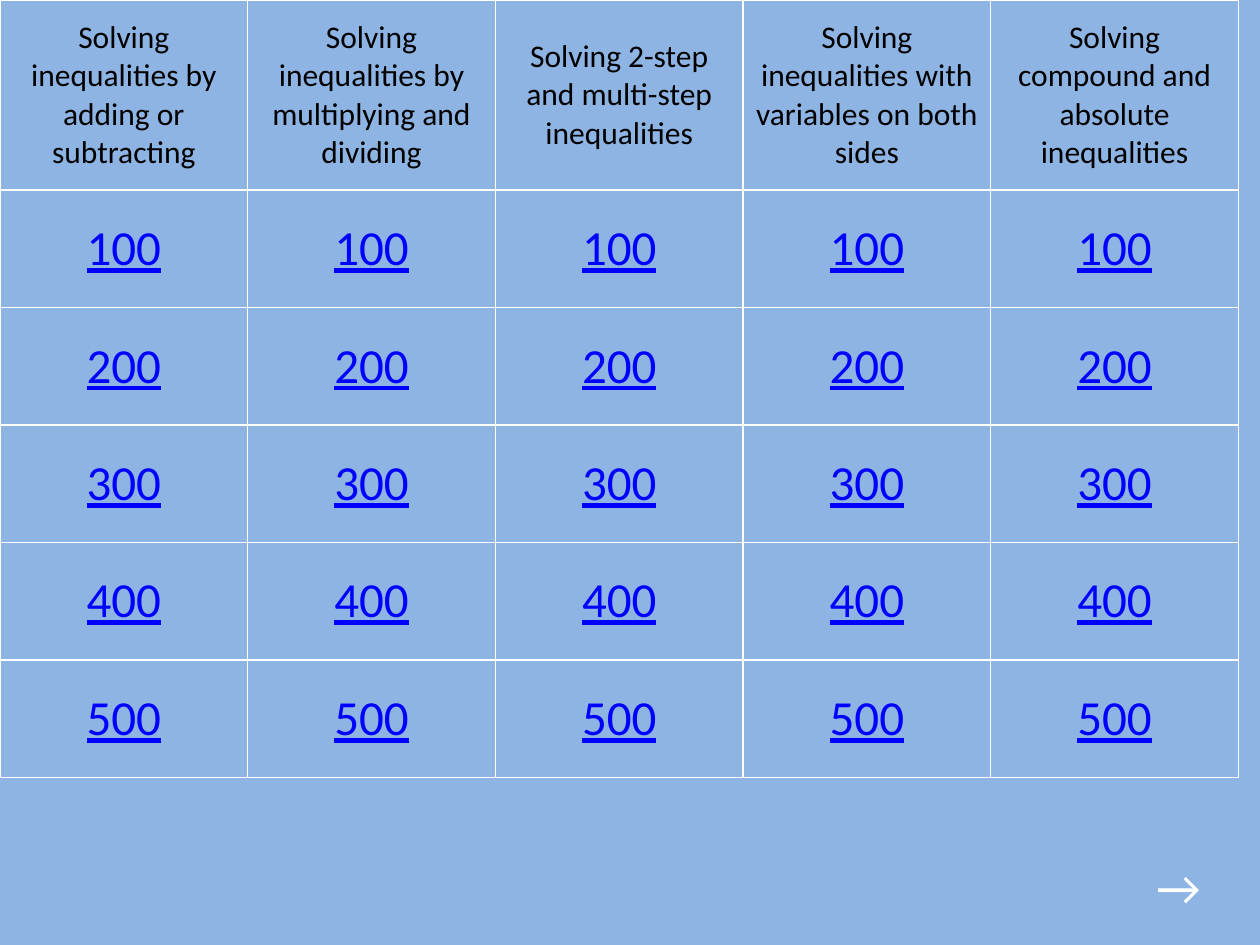
import pptx
import pptx.util
import pptx.dml.color
import pptx.enum.text
import pptx.oxml
import pptx.oxml.ns

Inches = pptx.util.Inches
Pt = pptx.util.Pt
RGB = pptx.dml.color.RGBColor

SKY = RGB(0x8E, 0xB4, 0xE3)
BLACK = RGB(0, 0, 0)
BLUE = RGB(0, 0, 0xFF)
WHITE = RGB(0xFF, 0xFF, 0xFF)
FONT = "Calibri"

TOPICS = [
    "Solving inequalities by adding or subtracting",
    "Solving inequalities by multiplying and dividing",
    "Solving 2-step and multi-step inequalities",
    "Solving inequalities with variables on both sides",
    "Solving compound and absolute inequalities",
]
POINTS = [100, 200, 300, 400, 500]
HEAD = 1.51


def write(frame, text, size, color, link=False):
    """Fill a text frame with one run; link gives it the underlined look."""
    frame.text = text
    font = frame.paragraphs[0].runs[0].font
    font.name, font.size, font.color.rgb = FONT, Pt(size), color
    if link:
        font.underline = True


def edge(cell, color, width):
    """Draw all four borders of a cell."""
    props = cell._tc.get_or_add_tcPr()
    for side in ("lnL", "lnR", "lnT", "lnB"):
        props.append(pptx.oxml.parse_xml(
            f'<a:{side} {pptx.oxml.ns.nsdecls("a")} w="{Pt(width)}">'
            f'<a:solidFill><a:srgbClr val="{color}"/></a:solidFill></a:{side}>'))


def board(slide, left, top, width, height):
    rows, cols = len(POINTS) + 1, len(TOPICS)
    table = slide.shapes.add_table(
        rows, cols, Inches(left), Inches(top), Inches(width), Inches(height)).table
    table.first_row = table.horz_banding = False
    for col in table.columns:
        col.width = Inches(width / cols)
    for i, row in enumerate(table.rows):
        row.height = Inches((height - HEAD) / len(POINTS) if i else HEAD)
        for cell, topic in zip(row.cells, TOPICS):
            if i:
                write(cell.text_frame, str(POINTS[i - 1]), 28, BLUE, link=True)
            else:
                write(cell.text_frame, topic, 18, BLACK)
            cell.text_frame.paragraphs[0].alignment = pptx.enum.text.PP_ALIGN.CENTER
            cell.vertical_anchor = pptx.enum.text.MSO_ANCHOR.MIDDLE
            edge(cell, WHITE, 1)
            cell.fill.background()


def arrow(slide, left, top, width, height):
    frame = slide.shapes.add_textbox(
        Inches(left), Inches(top), Inches(width), Inches(height)).text_frame
    frame.word_wrap = True
    frame.auto_size = pptx.enum.text.MSO_AUTO_SIZE.SHAPE_TO_FIT_TEXT
    write(frame, "→", 28, WHITE)


def main():
    deck = pptx.Presentation()
    deck.slide_width, deck.slide_height = Inches(10), Inches(7.5)
    slide = deck.slides.add_slide(deck.slide_layouts[6])
    fill = slide.background.fill
    fill.solid()
    fill.fore_color.rgb = SKY
    board(slide, 0, 0, 9.83, 6.17)
    arrow(slide, 9.08, 6.75, 0.67, 0.57)
    deck.save("out.pptx")


if __name__ == "__main__":
    main()
